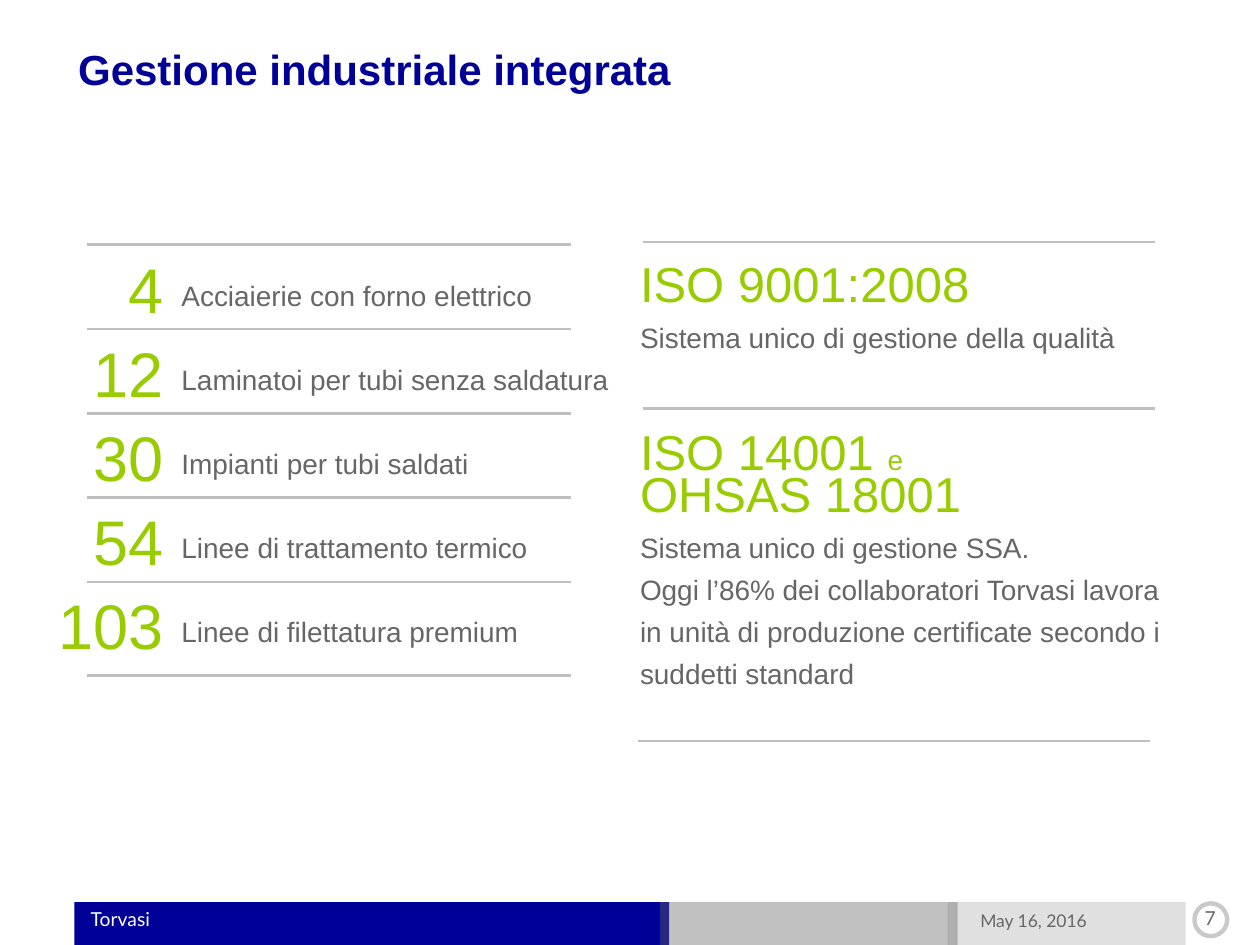
from dataclasses import dataclass

from lxml import etree
from pptx import Presentation
from pptx.dml.color import RGBColor
from pptx.enum import shapes, text
from pptx.oxml.ns import qn
from pptx.util import Inches, Pt


@dataclass(frozen=True)
class Theme:
    navy: str = "000099"
    green: str = "99CC00"
    grey: str = "666666"
    rule: str = "BFBFBF"
    white: str = "FFFFFF"
    font: str = "Arial"
    footer_font: str = "Lato"
    title: int = 24
    figure: int = 36
    standard: int = 28
    body: int = 16
    footer: int = 11
    date: int = 10


THEME = Theme()


def add_run(paragraph, wording, *, size, color, font=THEME.font, bold=False):
    run = paragraph.add_run()
    run.text = wording
    run.font.size = Pt(size)
    run.font.name = font
    run.font.bold = bold
    run.font.color.rgb = RGBColor.from_string(color)


def set_alpha(fill, percent):
    color = fill._xPr.find(qn("a:solidFill"))[0]
    etree.SubElement(color, qn("a:alpha")).set("val", str(percent * 1000))


class Page:
    def __init__(self, slide, theme):
        self.slide = slide
        self.theme = theme

    def text_box(self, left, top, width, height):
        box = self.slide.shapes.add_textbox(*map(Inches, (left, top, width, height)))
        frame = box.text_frame
        frame.word_wrap = True
        frame.margin_left = frame.margin_right = 0
        frame.margin_top = frame.margin_bottom = 0
        return frame

    def paragraph(self, frame, *runs, spacing=1.0, align=text.PP_ALIGN.LEFT, before=0):
        first = frame.paragraphs[0]
        paragraph = frame.add_paragraph() if first.runs else first
        paragraph.alignment = align
        paragraph.line_spacing = spacing
        if before:
            paragraph.space_before = Pt(before)
        for wording, style in runs:
            add_run(paragraph, wording, **style)

    def label(self, place, wording, style, **layout):
        self.paragraph(self.text_box(*place), (wording, style), **layout)

    def column(self, place, wordings, style, **layout):
        frame = self.text_box(*place)
        for wording in wordings:
            self.paragraph(frame, (wording, style), **layout)

    def bar(self, left, width, color, alpha=100):
        bar = self.slide.shapes.add_shape(
            shapes.MSO_SHAPE.RECTANGLE,
            Inches(left), Inches(7.16), Inches(width), Inches(0.34))
        bar.shadow.inherit = False
        bar.fill.solid()
        bar.fill.fore_color.rgb = RGBColor.from_string(color)
        if alpha < 100:
            set_alpha(bar.fill, alpha)
        bar.line.fill.background()

    def ring(self, left, top, size):
        ring = self.slide.shapes.add_shape(
            shapes.MSO_SHAPE.OVAL,
            Inches(left), Inches(top), Inches(size), Inches(size))
        ring.shadow.inherit = False
        ring.fill.background()
        ring.line.width = Pt(2.5)
        ring.line.color.rgb = RGBColor.from_string(self.theme.grey)
        set_alpha(ring.line.fill, 35)

    def rule(self, left, top, width):
        rule = self.slide.shapes.add_connector(
            shapes.MSO_CONNECTOR.STRAIGHT,
            Inches(left), Inches(top), Inches(left + width), Inches(top))
        rule.line.width = Pt(1.5)
        rule.line.color.rgb = RGBColor.from_string(self.theme.rule)
        etree.SubElement(rule._element.spPr, qn("a:effectLst"))


def add_footer(page):
    theme = page.theme
    page.bar(0.59, 4.72, theme.navy)
    page.bar(5.24, 2.36, theme.grey, alpha=40)
    page.bar(7.52, 1.89, theme.grey, alpha=20)
    company = dict(size=theme.footer, color=theme.white, font=theme.footer_font)
    number = dict(company, color=theme.grey)
    date = dict(number, size=theme.date)
    page.label((0.72, 7.22, 4.44, 0.17), "Torvasi", company, spacing=0.9)
    page.label((9.39, 7.19, 0.43, 0.19), "7", number, align=text.PP_ALIGN.CENTER)
    page.label((7.78, 7.24, 1.55, 0.19), "May 16, 2016", date, spacing=0.9)
    page.ring(9.48, 7.17, 0.26)


def add_plants(page):
    theme = page.theme
    plants = [
        ("4", "Acciaierie con forno elettrico"),
        ("12", "Laminatoi per tubi senza saldatura"),
        ("30", "Impianti per tubi saldati"),
        ("54", "Linee di trattamento termico"),
        ("103", "Linee di filettatura premium"),
    ]
    counts, names = zip(*plants)
    page.column((0.2, 1.92, 1.1, 3.64), counts,
                dict(size=theme.figure, color=theme.green),
                spacing=Pt(48), align=text.PP_ALIGN.RIGHT)
    page.column((1.44, 1.81, 3.62, 3.37), names,
                dict(size=theme.body, color=theme.grey), spacing=Pt(48))
    for row in range(len(plants)):
        page.rule(0.69, 1.94 + 0.67 * row, 3.84)
    page.rule(0.69, 5.36, 3.84)


def add_standards(page):
    theme = page.theme
    standard = dict(size=theme.standard, color=theme.green)
    joiner = dict(standard, size=theme.body)
    body = dict(size=theme.body, color=theme.grey)
    tall, short = Pt(48), Pt(24)
    frame = page.text_box(5.08, 1.81, 4.17, 4.06)
    page.paragraph(frame, ("ISO 9001:2008", standard), spacing=tall)
    page.paragraph(frame, ("Sistema unico di gestione della qualità", body), spacing=short)
    page.paragraph(frame, ("ISO 14001 ", standard), ("e", joiner), spacing=tall, before=24)
    page.paragraph(frame, ("OHSAS 18001", standard), spacing=short)
    for sentence in (
        "Sistema unico di gestione SSA.",
        "Oggi l’86% dei collaboratori Torvasi lavora in unità di produzione "
        "certificate secondo i suddetti standard",
    ):
        page.paragraph(frame, (sentence, body), spacing=short)
    for left, top in ((5.1, 1.92), (5.1, 3.24), (5.06, 5.88)):
        page.rule(left, top, 4.07)


def main():
    deck = Presentation()
    deck.slide_width, deck.slide_height = Inches(10), Inches(7.5)
    page = Page(deck.slides.add_slide(deck.slide_layouts[6]), THEME)
    add_footer(page)
    page.label((0.62, 0.39, 8.32, 0.37), "Gestione industriale integrata",
               dict(size=THEME.title, color=THEME.navy, bold=True), spacing=0.9)
    add_plants(page)
    add_standards(page)
    deck.save("out.pptx")


if __name__ == "__main__":
    main()
